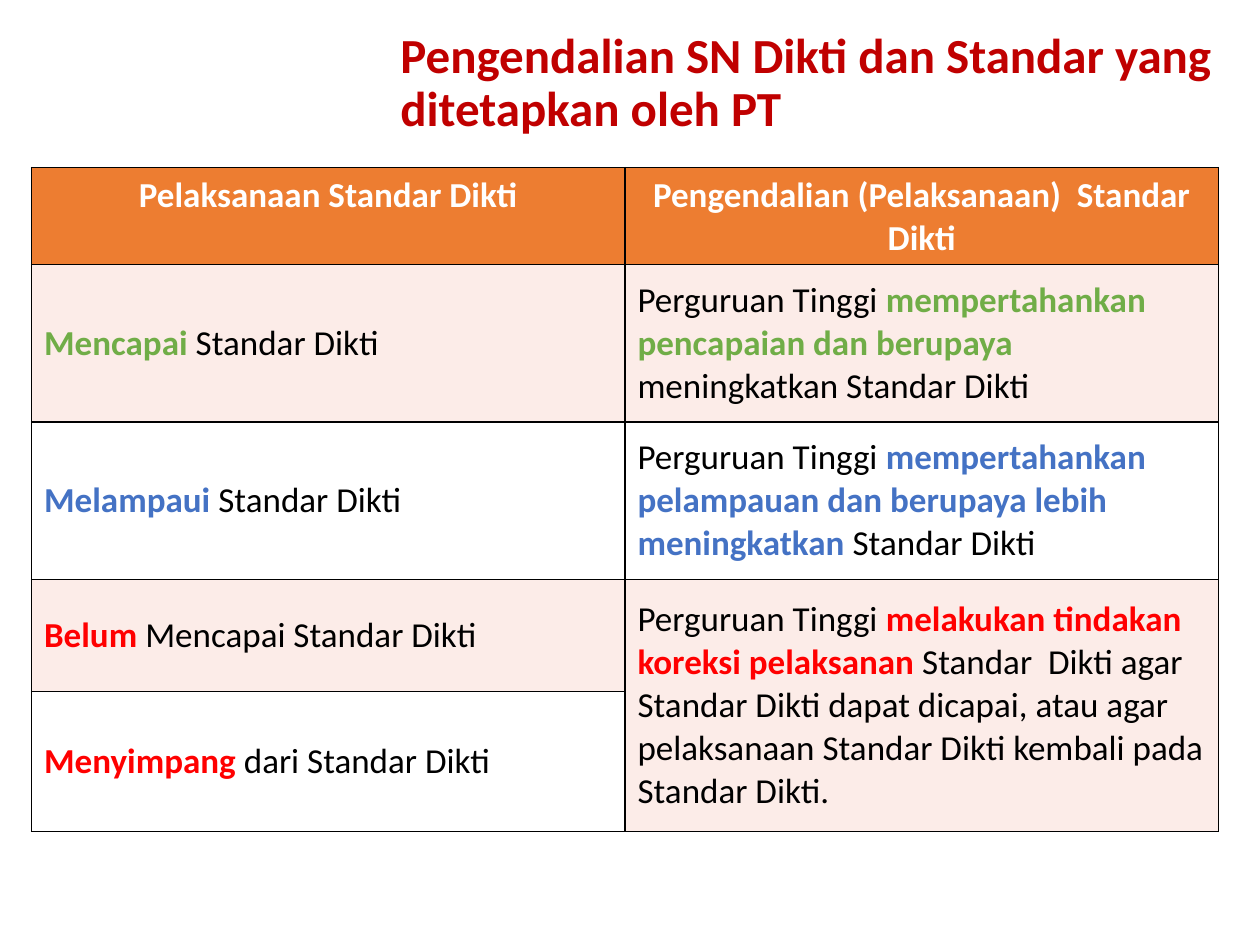
from dataclasses import dataclass

from lxml import etree
from pptx import Presentation
from pptx import util as u
from pptx.dml.color import RGBColor
from pptx.enum import text
from pptx.oxml.ns import qn


@dataclass(frozen=True)
class Theme:
    font: str = "Calibri"
    title: str = "C00000"
    head: str = "ED7D31"
    band: str = "FCECE8"
    white: str = "FFFFFF"
    ink: str = "000000"
    green: str = "70AD47"
    blue: str = "4472C4"
    red: str = "FF0000"
    big: int = 28
    body: int = 20
    rule: int = 1


T = Theme()
PT = "Perguruan Tinggi "
COLS = [4.71, 4.71]
ROWS = [0.77, 1.25, 1.25, 0.89, 1.11]
HEADS = ["Pelaksanaan Standar Dikti",
         "Pengendalian (Pelaksanaan)  Standar Dikti"]

# Each cell: accent colour, then plain lead, bold accent, plain rest
BODY = [
    [(T.green, "", "Mencapai ", "Standar Dikti"),
     (T.green, PT, "mempertahankan pencapaian dan berupaya ",
      "meningkatkan Standar Dikti")],
    [(T.blue, "", "Melampaui ", "Standar Dikti"),
     (T.blue, PT, "mempertahankan pelampauan dan berupaya lebih meningkatkan ",
      "Standar Dikti")],
    [(T.red, "", "Belum ", "Mencapai Standar Dikti"),
     (T.red, PT, "melakukan tindakan koreksi pelaksanan ",
      "Standar  Dikti agar Standar Dikti dapat dicapai, atau agar "
      "pelaksanaan Standar Dikti kembali pada Standar Dikti.")],
    [(T.red, "", "Menyimpang ", "dari Standar Dikti")],
]


def style(font, color, bold):
    font.color.rgb = RGBColor.from_string(color)
    font.bold = bold


def set_para(para, words, size, color):
    """Write a paragraph in one bold style."""
    para.text = words
    para.font.name = T.font
    para.font.size = u.Pt(size)
    style(para.font, color, True)


def add_title(slide, words):
    box = slide.shapes.add_textbox(u.Inches(3.08), u.Inches(0.17),
                                   u.Inches(7), u.Inches(1))
    frame = box.text_frame
    frame.word_wrap = True
    frame.vertical_anchor = text.MSO_ANCHOR.MIDDLE
    para = frame.paragraphs[0]
    set_para(para, words, T.big, T.title)
    para.line_spacing = 0.9


def paint(cell, color):
    """Give a cell its borders and fill."""
    props = cell._tc.get_or_add_tcPr()
    for side in ("a:lnL", "a:lnR", "a:lnT", "a:lnB"):
        line = etree.SubElement(props, qn(side), w=str(u.Pt(T.rule)))
        fill = etree.SubElement(line, qn("a:solidFill"))
        etree.SubElement(fill, qn("a:srgbClr"), val=T.ink)
    cell.fill.solid()
    cell.fill.fore_color.rgb = RGBColor.from_string(color)


def fill_head(cell, words):
    para = cell.text_frame.paragraphs[0]
    set_para(para, words, T.body, T.white)
    para.alignment = text.PP_ALIGN.CENTER


def fill_body(cell, accent, lead, key, rest):
    cell.vertical_anchor = text.MSO_ANCHOR.MIDDLE
    para = cell.text_frame.paragraphs[0]
    para.font.name = T.font
    para.font.size = u.Pt(T.body)
    for words, color, bold in ((lead, T.ink, False), (key, accent, True),
                               (rest, T.ink, False)):
        if words:
            run = para.add_run()
            run.text = words
            style(run.font, color, bold)


def add_grid(slide):
    table = slide.shapes.add_table(
        len(ROWS), len(COLS), u.Inches(0.25), u.Inches(1.33),
        u.Inches(sum(COLS)), u.Inches(sum(ROWS))).table
    for col, width in zip(table.columns, COLS):
        col.width = u.Inches(width)
    for row, height in zip(table.rows, ROWS):
        row.height = u.Inches(height)

    # Fills alternate below the header; the merged cell keeps its first band
    for r in range(len(ROWS)):
        color = T.head if r == 0 else (T.white, T.band)[r % 2]
        for cell in table.rows[r].cells:
            paint(cell, color)
    table.cell(3, 1).merge(table.cell(4, 1))

    for c, words in enumerate(HEADS):
        fill_head(table.cell(0, c), words)
    for r, row in enumerate(BODY, 1):
        for c, parts in enumerate(row):
            fill_body(table.cell(r, c), *parts)


def main():
    deck = Presentation()
    deck.slide_width, deck.slide_height = u.Inches(10), u.Inches(7.5)
    slide = deck.slides.add_slide(deck.slide_layouts[6])
    add_title(slide, "Pengendalian SN Dikti dan Standar yang ditetapkan oleh PT")
    add_grid(slide)
    deck.save("out.pptx")


if __name__ == "__main__":
    main()
